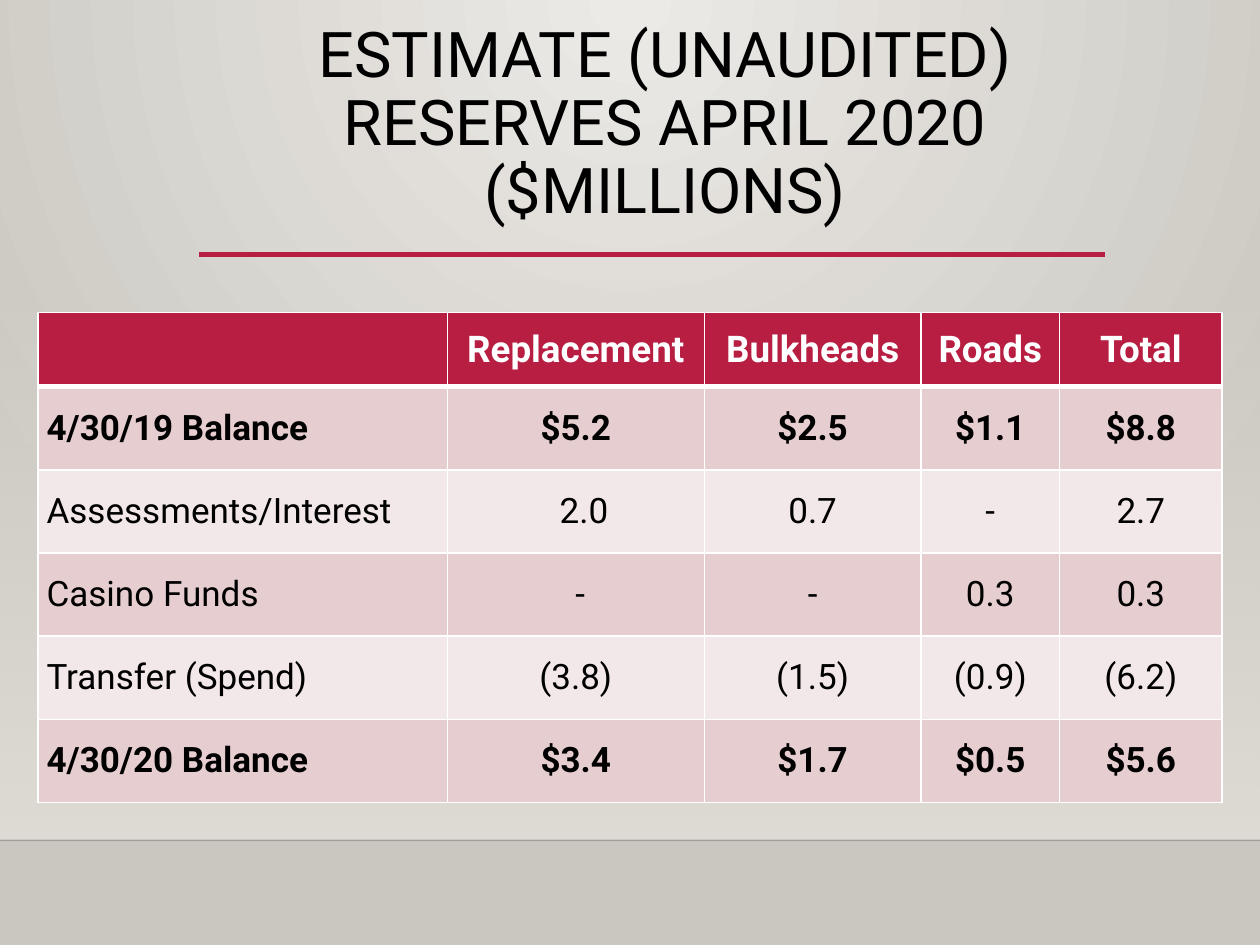
from lxml.etree import SubElement
from pptx import Presentation
from pptx.dml.color import RGBColor
from pptx.enum.shapes import MSO_CONNECTOR, MSO_SHAPE
from pptx.enum.text import MSO_ANCHOR, MSO_AUTO_SIZE, PP_ALIGN
from pptx.oxml.ns import qn
from pptx.util import Inches, Pt

COLORS = {
    "accent": "B71E42",
    "glow": "ECEAE7",
    "edge": "CAC7C1",
    "wall": "DFDBD5",
    "floor_line": "000001",
    "text": "000000",
    "white": "FFFFFF",
    "dark_band": "E6CDCF",
    "light_band": "F3E8E9",
}
FONT = "Roboto"
HEADERS = ["", "Replacement", "Bulkheads", "Roads", "Total"]
ROWS = [
    ["4/30/19 Balance", "$5.2", "$2.5", "$1.1", "$8.8"],
    ["Assessments/Interest", "2.0", "0.7", "-", "2.7"],
    ["Casino Funds", "-", "-", "0.3", "0.3"],
    ["Transfer (Spend)", "(3.8)", "(1.5)", "(0.9)", "(6.2)"],
    ["4/30/20 Balance", "$3.4", "$1.7", "$0.5", "$5.6"],
]
COLUMN_WIDTHS = [3.25, 2.04, 1.72, 1.1, 1.29]
HEADER_HEIGHT, ROW_HEIGHT = 0.59, 0.66
# Extra left margin, by (row, column), for figures set slightly to the right
NUDGES = {(2, 1): 0.13, (3, 1): 0.07}


def rgb(name):
    return RGBColor.from_string(COLORS[name])


def write(frame, text, size, color="text", bold=False, align=PP_ALIGN.LEFT, spacing=None):
    """Fill a text frame with one paragraph; a newline is a line break."""
    para = frame.paragraphs[0]
    para.alignment = align
    if spacing:
        para.line_spacing = spacing
    for index, line in enumerate(text.split("\n")):
        if index:
            para.add_line_break()
        span = para.add_run()
        span.text = line
        span.font.name = FONT
        span.font.size = Pt(size)
        span.font.bold = bold
        span.font.color.rgb = rgb(color)


def set_gradient(fill, start, end):
    fill.gradient()
    for stop, color in zip(fill.gradient_stops, (start, end)):
        stop.color.rgb = rgb(color)


def set_alpha(color_element, percent):
    SubElement(color_element, qn("a:alpha"), val=str(percent * 1000))


def add_line(page, left, top, right, color, width):
    line = page.shapes.add_connector(
        MSO_CONNECTOR.STRAIGHT, Inches(left), Inches(top), Inches(right), Inches(top))
    line.line.color.rgb = rgb(color)
    line.line.width = Pt(width)
    SubElement(line._element.spPr, qn("a:effectLst"))
    return line


def paint_background(page):
    """Radial glow from the top centre."""
    fill = page.background.fill
    set_gradient(fill, "glow", "edge")
    gradient = next(page.background._cSld.iter(qn("a:gradFill")))
    gradient.remove(gradient.find(qn("a:lin")))
    circle = SubElement(gradient, qn("a:path"))
    circle.set("path", "circle")
    SubElement(circle, qn("a:fillToRect"), l="43000", t="0", r="43000", b="100000")


def add_wall(page, left, top, width, height):
    """Panel that fades in downwards, with a faint line along its foot."""
    wall = page.shapes.add_shape(
        MSO_SHAPE.RECTANGLE, Inches(left), Inches(top), Inches(width), Inches(height))
    wall.shadow.inherit = False
    wall.line.fill.background()
    set_gradient(wall.fill, "wall", "wall")
    wall.fill.gradient_angle = 270
    set_alpha(next(wall._element.iter(qn("a:srgbClr"))), 0)
    foot = add_line(page, left, top + height + 0.01, left + width, "floor_line", 1)
    set_alpha(next(foot._element.iter(qn("a:srgbClr"))), 20)


def add_title(page, text, left, top, width, height):
    title = page.shapes.title
    title.left, title.top = Inches(left), Inches(top)
    title.width, title.height = Inches(width), Inches(height)
    frame = title.text_frame
    frame.word_wrap = True
    frame.auto_size = MSO_AUTO_SIZE.NONE
    frame.vertical_anchor = MSO_ANCHOR.TOP
    write(frame, text, 36, align=PP_ALIGN.CENTER, spacing=0.9)
    page.shapes._spTree.append(title._element)
    add_line(page, left + 0.2, top + 1.89, left + width - 0.41, "accent", 2.5)


def set_borders(cell, bottom):
    properties = cell._tc.get_or_add_tcPr()
    for side, width in (("L", 1), ("R", 1), ("T", 1), ("B", bottom)):
        border = SubElement(properties, qn(f"a:ln{side}"), w=str(Pt(width)))
        solid = SubElement(border, qn("a:solidFill"))
        SubElement(solid, qn("a:srgbClr"), val=COLORS["white"])


def add_reserves_table(page, left, top):
    heights = [HEADER_HEIGHT] + [ROW_HEIGHT] * len(ROWS)
    table = page.shapes.add_table(
        len(heights), len(HEADERS), Inches(left), Inches(top),
        Inches(sum(COLUMN_WIDTHS)), Inches(sum(heights))).table
    for column, width in zip(table.columns, COLUMN_WIDTHS):
        column.width = Inches(width)
    for row, height in zip(table.rows, heights):
        row.height = Inches(height)

    for r, values in enumerate([HEADERS] + ROWS):
        is_header = r == 0
        band = "accent" if is_header else "dark_band" if r % 2 else "light_band"
        bold = is_header or r in (1, len(ROWS))
        # The rule under the header is shared with the first body row
        for c, text in enumerate(values):
            cell = table.cell(r, c)
            set_borders(cell, bottom=3 if is_header else 1)
            if r == 1:
                cell._tc.tcPr.find(qn("a:lnT")).set("w", str(Pt(3)))
            cell.fill.solid()
            cell.fill.fore_color.rgb = rgb(band)
            cell.vertical_anchor = MSO_ANCHOR.MIDDLE
            cell.margin_left = Inches(0.07 + NUDGES.get((r, c), 0))
            cell.margin_right = Inches(0.07)
            cell.margin_top = cell.margin_bottom = Inches(0.05)
            if text:
                write(cell.text_frame, text, 21 if is_header else 20,
                      color="white" if is_header else "text", bold=bold,
                      align=PP_ALIGN.CENTER if c else PP_ALIGN.LEFT)


def main():
    deck = Presentation()
    deck.slide_width, deck.slide_height = Inches(10), Inches(7.5)
    page = deck.slides.add_slide(deck.slide_layouts[5])
    paint_background(page)
    add_wall(page, 0, 2.2, 10, 4.46)
    add_title(page, "ESTIMATE (UNAUDITED)\nRESERVES APRIL 2020 ($MILLIONS)",
              1.38, 0.13, 7.8, 0.64)
    add_reserves_table(page, 0.3, 2.48)
    deck.save("out.pptx")


if __name__ == "__main__":
    main()
